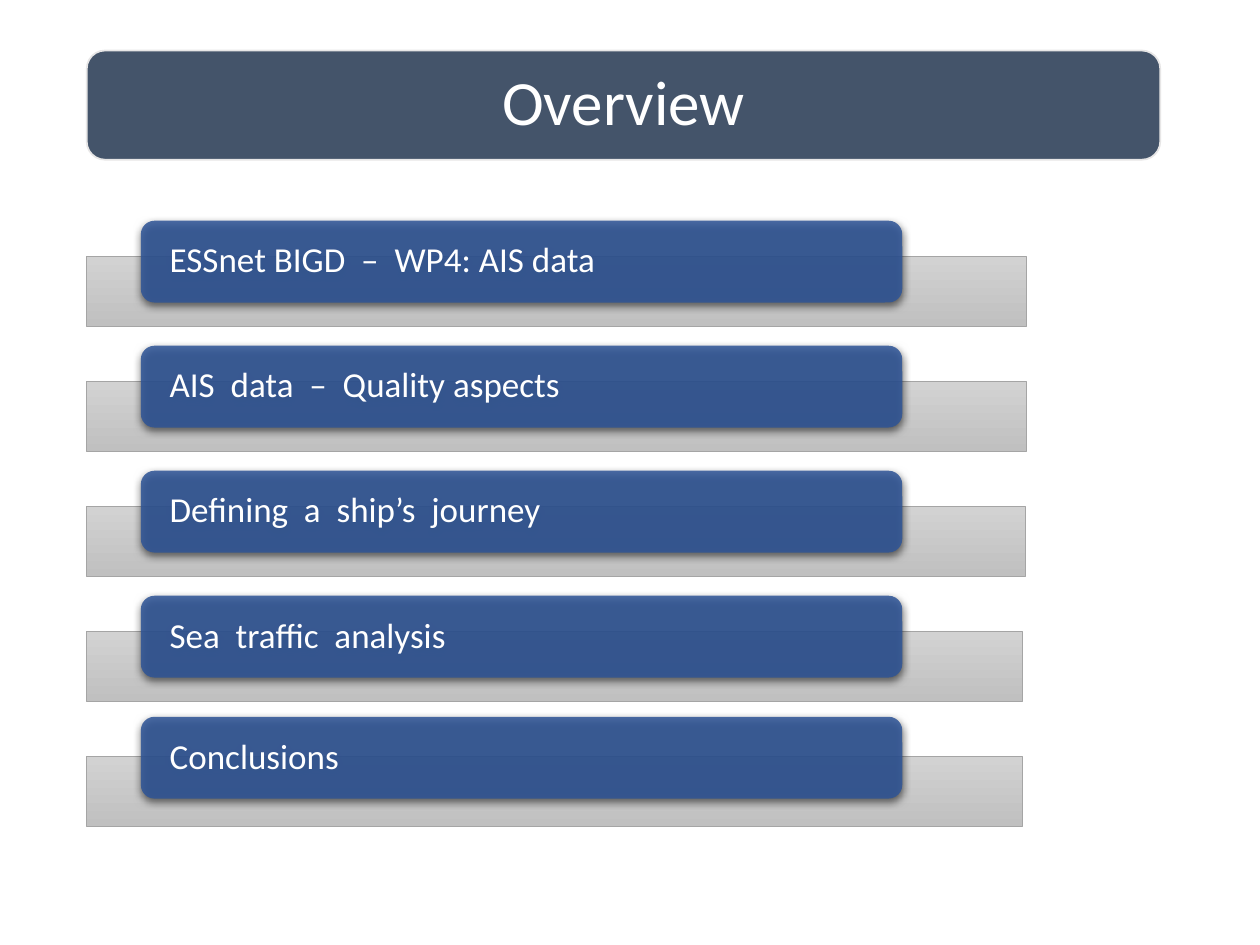
from lxml.etree import SubElement
from pptx import Presentation
from pptx.dml.color import RGBColor
from pptx.enum.shapes import MSO_SHAPE as Shape
from pptx.enum.text import MSO_ANCHOR as Anchor, PP_ALIGN as Align
from pptx.oxml.ns import qn
from pptx.util import Cm, Pt

COLORS = {
    "title": "44546A", "title_line": "E7E6E6",
    "tab": "2F5597", "shadow": "000000", "text": "FFFFFF",
    "bar_top": "D2D2D2", "bar_bottom": "C0C0C0", "bar_line": "A5A5A5",
}
LEFT = 1.75
BAR_TOP, PITCH = 5.18, 2.52
# topic, width of its bar, rise of its tab above the bar
TOPICS = [
    ("ESSnet BIGD  –  WP4: AIS data", 18.95, 0.73),
    ("AIS  data  –  Quality aspects", 18.95, 0.73),
    ("Defining  a  ship’s  journey", 18.92, 0.73),
    ("Sea  traffic  analysis", 18.87, 0.73),
    ("Conclusions", 18.87, 0.81),
]


def rgb(name):
    return RGBColor.from_string(COLORS[name])


class OverviewSlide:
    """Holds the text style and the slide being drawn."""

    font = "Calibri"

    def __init__(self, prs):
        self.slide = prs.slides.add_slide(prs.slide_layouts[6])

    def shape(self, kind, x, y, w, h, fill=None, line=None, line_width=1):
        sp = self.slide.shapes.add_shape(kind, Cm(x), Cm(y), Cm(w), Cm(h))
        sp.shadow.inherit = False
        if fill:
            sp.fill.solid()
            sp.fill.fore_color.rgb = rgb(fill)
        if line:
            sp.line.color.rgb = rgb(line)
            sp.line.width = Pt(line_width)
        else:
            sp.line.fill.background()
        return sp

    def text(self, sp, words, size, align, inset):
        tf = sp.text_frame
        tf.word_wrap = True
        tf.vertical_anchor = Anchor.MIDDLE
        tf.margin_left = tf.margin_right = Cm(inset)
        tf.margin_top = tf.margin_bottom = 0
        p = tf.paragraphs[0]
        p.alignment = align
        p.line_spacing = 0.9
        r = p.add_run()
        r.text = words
        r.font.name = self.font
        r.font.size = Pt(size)
        r.font.color.rgb = rgb("text")

    def title(self, words):
        sp = self.shape(Shape.ROUNDED_RECTANGLE, LEFT, 1.02, 21.64, 2.2,
                        "title", "title_line")
        self.text(sp, words, 36, Align.CENTER, 0.38)

    def bar(self, y, width):
        sp = self.shape(Shape.RECTANGLE, LEFT, y, width, 1.4,
                        line="bar_line", line_width=0.5)
        sp.fill.gradient()
        sp.fill.gradient_angle = 270
        for stop, name in zip(sp.fill.gradient_stops, ("bar_top", "bar_bottom")):
            stop.color.rgb = rgb(name)

    def tab(self, y, words):
        sp = self.shape(Shape.ROUNDED_RECTANGLE, 2.84, y, 15.35, 1.65, "tab")
        self.text(sp, words, 20, Align.LEFT, 0.5)
        self.soften(sp)

    def soften(self, sp):
        """Make the fill slightly transparent and drop a shadow below."""
        sp_pr = sp.element.spPr
        color = sp_pr.find(f"{qn('a:solidFill')}/{qn('a:srgbClr')}")
        SubElement(color, qn("a:alpha"), val="86000")
        shadow = SubElement(sp_pr.find(qn("a:effectLst")), qn("a:outerShdw"),
                            blurRad=str(Pt(4.5)), dist=str(Pt(1.5)),
                            dir="5400000", algn="ctr", rotWithShape="0")
        color = SubElement(shadow, qn("a:srgbClr"), val=COLORS["shadow"])
        SubElement(color, qn("a:alpha"), val="63000")


def main():
    prs = Presentation()
    prs.slide_width, prs.slide_height = Cm(25.4), Cm(19.05)
    s = OverviewSlide(prs)
    for i, (topic, width, rise) in enumerate(TOPICS):
        y = BAR_TOP + i * PITCH
        s.bar(y, width)
        s.tab(y - rise, topic)
    s.title("Overview")
    prs.save("out.pptx")


if __name__ == "__main__":
    main()
